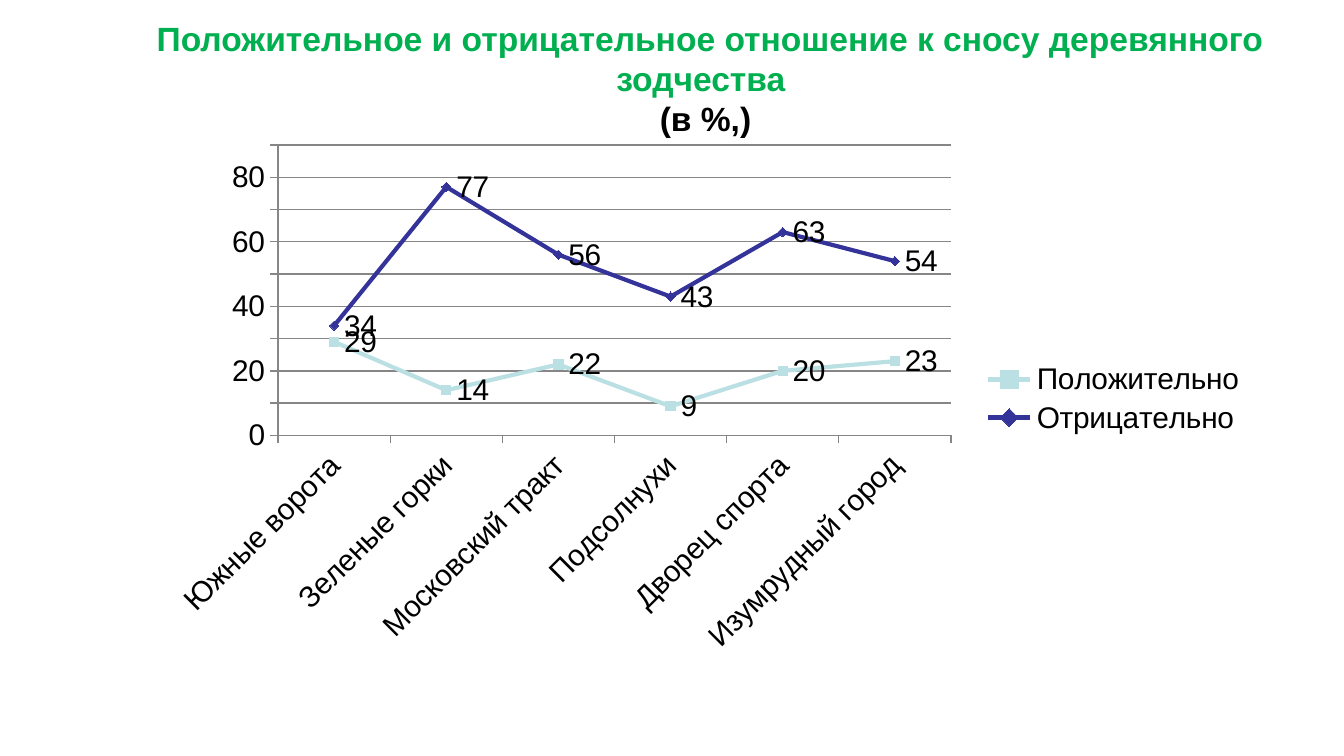
"""Build a slide with a line chart of attitudes to demolishing wooden buildings."""
from dataclasses import dataclass

from lxml import etree
from pptx import Presentation
from pptx import util as u
from pptx.chart import data as cd
from pptx.dml.color import RGBColor
from pptx.enum import chart as ch
from pptx.enum import text as tx
from pptx.oxml import ns

HUES = {"black": "000000", "green": "00B050", "grey": "868686",
        "pale": "BBE0E3", "navy": "333399"}
FACE = "Arial"
AREAS = ("Южные ворота", "Зеленые горки", "Московский тракт",
         "Подсолнухи", "Дворец спорта", "Изумрудный город")


@dataclass
class Span:
    text: str
    hue: str


@dataclass
class Trend:
    name: str
    vals: tuple[int, ...]
    hue: str
    mark: ch.XL_MARKER_STYLE


TITLE = (
    (Span(" ", "black"),
     Span("Положительное и отрицательное отношение к сносу деревянного зодчества ", "green")),
    (Span("(в %,)", "black"),),
)
TRENDS = (
    Trend("Положительно", (29, 14, 22, 9, 20, 23), "pale", ch.XL_MARKER_STYLE.SQUARE),
    Trend("Отрицательно", (34, 77, 56, 43, 63, 54), "navy", ch.XL_MARKER_STYLE.DIAMOND),
)


def tint(hue: str) -> RGBColor:
    """Return a named colour."""
    return RGBColor.from_string(HUES[hue])


def style(font, hue: str, size: int, bold: bool = False) -> None:
    """Set face, size, weight and colour of a font."""
    font.name, font.size, font.bold = FACE, u.Pt(size), bold
    font.color.rgb = tint(hue)


def stroke(line, hue: str, width: float) -> None:
    """Set colour and width of a line."""
    line.color.rgb = tint(hue)
    line.width = u.Pt(width)


def head(shape) -> None:
    """Place and fill the title."""
    shape.left, shape.top = u.Pt(37.5), u.Pt(6.5)
    shape.width, shape.height = u.Pt(681), u.Pt(70.5)
    frame = shape.text_frame
    frame.word_wrap = True
    frame.auto_size = tx.MSO_AUTO_SIZE.SHAPE_TO_FIT_TEXT
    frame.vertical_anchor = tx.MSO_ANCHOR.TOP
    frame.margin_left = frame.margin_right = u.Pt(5)
    frame.margin_top = frame.margin_bottom = u.Pt(3)
    for row, spans in enumerate(TITLE):
        para = frame.add_paragraph() if row else frame.paragraphs[0]
        para.alignment = tx.PP_ALIGN.CENTER
        for span in spans:
            run = para.add_run()
            run.text = span.text
            style(run.font, span.hue, 18, True)


def frame_plot(chart) -> None:
    """Fix the inner plot area as shares of the chart."""
    area = chart.plots[0]._element.getparent()
    for old in area.findall(ns.qn("c:layout")):
        area.remove(old)
    layout = etree.Element(ns.qn("c:layout"))
    area.insert(0, layout)
    man = etree.SubElement(layout, ns.qn("c:manualLayout"))
    rules = {"layoutTarget": "inner", "xMode": "edge", "yMode": "edge",
             "x": "0.11", "y": "0.02", "w": "0.61", "h": "0.55"}
    for tag, val in rules.items():
        etree.SubElement(man, ns.qn(f"c:{tag}")).set("val", val)


def draw(line, trend: Trend) -> None:
    """Format one line with its markers and labels."""
    line.smooth = False
    stroke(line.format.line, trend.hue, 2.25)
    line.marker.style, line.marker.size = trend.mark, 5
    line.marker.format.fill.solid()
    line.marker.format.fill.fore_color.rgb = tint(trend.hue)
    stroke(line.marker.format.line, trend.hue, 0.75)
    tags = line.data_labels
    tags.show_value = True
    tags.position = ch.XL_LABEL_POSITION.RIGHT
    style(tags.font, "black", 16)


def plot(slide) -> None:
    """Add the line chart."""
    data = cd.CategoryChartData()
    data.categories = AREAS
    for trend in TRENDS:
        data.add_series(trend.name, trend.vals)
    chart = slide.shapes.add_chart(
        ch.XL_CHART_TYPE.LINE_MARKERS, u.Pt(84), u.Pt(72), u.Pt(591), u.Pt(283), data).chart
    style(chart.font, "black", 16)
    chart.has_title = False
    chart.has_legend = True
    chart.legend.position = ch.XL_LEGEND_POSITION.RIGHT
    chart.legend.include_in_layout = False
    chart.plots[0].vary_by_categories = False
    cats, vals = chart.category_axis, chart.value_axis
    for axis in (cats, vals):
        stroke(axis.format.line, "grey", 0.75)
        axis.major_tick_mark = ch.XL_TICK_MARK.OUTSIDE
        axis.minor_tick_mark = ch.XL_TICK_MARK.NONE
        style(axis.tick_labels.font, "black", 16)
    turn = cats._element.find(ns.qn("c:txPr")).find(ns.qn("a:bodyPr"))
    turn.set("rot", "-2700000")
    vals.minimum_scale, vals.maximum_scale, vals.major_unit = 0, 90, 10
    vals.has_major_gridlines = True
    stroke(vals.major_gridlines.format.line, "grey", 0.75)
    frame_plot(chart)
    for line, trend in zip(chart.plots[0].series, TRENDS):
        draw(line, trend)


def main() -> None:
    """Create and save the deck."""
    deck = Presentation()
    deck.slide_width, deck.slide_height = u.Pt(720), u.Pt(405)
    slide = deck.slides.add_slide(deck.slide_layouts[5])
    head(slide.shapes.title)
    plot(slide)
    deck.save("out.pptx")


if __name__ == "__main__":
    main()
